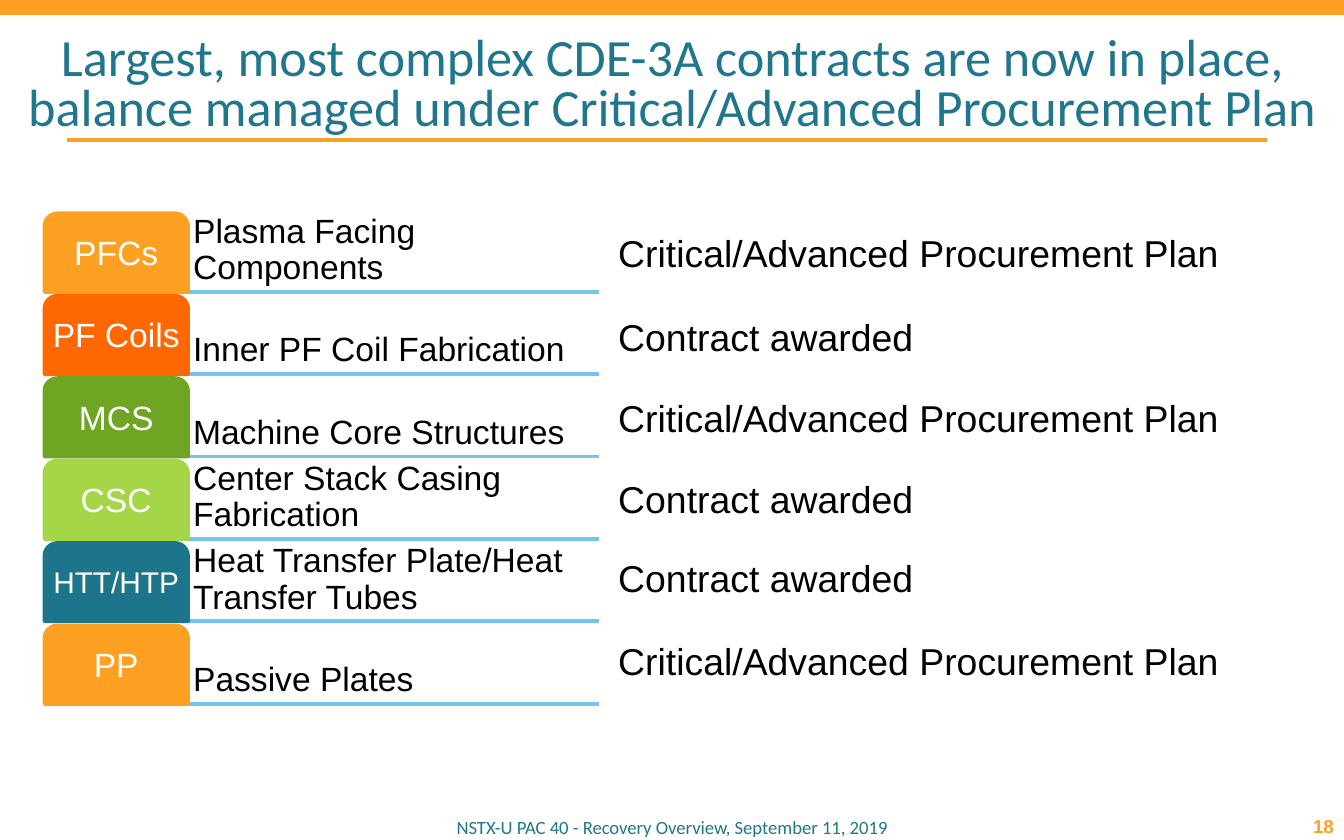
from lxml import etree
from pptx import Presentation
from pptx.dml.color import RGBColor
from pptx.enum import shapes, text
from pptx.oxml.ns import qn
from pptx.util import Pt

TITLE = ("Largest, most complex CDE-3A contracts are now in place, "
         "balance managed under Critical/Advanced Procurement Plan")
FOOTER = "NSTX-U PAC 40 - Recovery Overview, September 11, 2019"
PAGE = "18"
PLAN, AWARDED = "Critical/Advanced Procurement Plan", "Contract awarded"
PROCUREMENTS = [
    ("PFCs", 18, "FEA022", "Plasma Facing Components", PLAN, 119.5),
    ("PF Coils", 18, "FF6700", "Inner PF Coil Fabrication", AWARDED, 165),
    ("MCS", 18, "6EA522", "Machine Core Structures", PLAN, 208),
    ("CSC", 18, "A4D647", "Center Stack Casing Fabrication", AWARDED, 251.3),
    ("HTT/HTP", 16, "1D758C", "Heat Transfer Plate/Heat Transfer Tubes", AWARDED, 293.8),
    ("PP", 18, "FEA022", "Passive Plates", PLAN, 338.4),
]
ORANGE, TEAL, SKY = "FEA022", "20768C", "74C5EE"
LEFT, TOP, PITCH = 23.8, 114.3, 44.15
TAB_W, ROW_H, ROW_W = 77, 42, 297.3
ALIGN, ANCHOR = text.PP_ALIGN, text.MSO_ANCHOR


def rgb(value):
    """Turn a hex string into a colour."""
    return RGBColor.from_string(value)


def write(sp, words, size, color, font="Arial", align=ALIGN.LEFT,
          anchor=ANCHOR.MIDDLE, inset=(7.2, 3.6), spacing=1.0, bold=False):
    """Fill a shape with one formatted paragraph."""
    tf = sp.text_frame
    tf.text = words
    tf.word_wrap = True
    tf.auto_size = text.MSO_AUTO_SIZE.NONE
    tf.vertical_anchor = anchor
    tf.margin_left = tf.margin_right = Pt(inset[0])
    tf.margin_top = tf.margin_bottom = Pt(inset[1])
    p = tf.paragraphs[0]
    p.alignment, p.line_spacing = align, spacing
    p.font.name, p.font.size, p.font.bold = font, Pt(size), bold
    p.font.color.rgb = rgb(color)


def add_text(slide, box, *args, **kwargs):
    """Add a text box holding one paragraph."""
    write(slide.shapes.add_textbox(*map(Pt, box)), *args, **kwargs)


def add_block(slide, kind, box, color):
    """Add a solid shape without shadow or outline."""
    sp = slide.shapes.add_shape(kind, *map(Pt, box))
    sp.shadow.inherit = False
    sp.fill.solid()
    sp.fill.fore_color.rgb = rgb(color)
    sp.line.fill.background()
    return sp


def add_rule(slide, x1, x2, y, color):
    """Add a horizontal line."""
    line = slide.shapes.add_connector(
        shapes.MSO_CONNECTOR.STRAIGHT, Pt(x1), Pt(y), Pt(x2), Pt(y))
    line.line.color.rgb = rgb(color)
    line.line.width = Pt(2)
    etree.SubElement(line._element.spPr, qn("a:effectLst"))


def add_row(slide, y, tab, size, color, name, status, status_top):
    """Add one procurement: tab, name and status."""
    add_rule(slide, LEFT, LEFT + ROW_W, y + ROW_H, SKY)
    add_text(slide, (LEFT + TAB_W, y, ROW_W - TAB_W, ROW_H), name, 18, "000000",
             anchor=ANCHOR.BOTTOM, inset=(2.7, 2.7), spacing=0.9)
    sp = add_block(slide, shapes.MSO_SHAPE.ROUND_2_SAME_RECTANGLE,
                   (LEFT, y, TAB_W, ROW_H), color)
    sp.line.color.rgb = rgb(color)
    sp.line.width = Pt(2)
    write(sp, tab, size, "FFFFFF", align=ALIGN.CENTER, inset=(2.4, 2.4), spacing=0.9)
    add_text(slide, (LEFT + ROW_W + 3, status_top, 362, 31.5), status, 20, "000000",
             anchor=ANCHOR.TOP)


def main():
    """Build and save the slide."""
    prs = Presentation()
    prs.slide_width, prs.slide_height = Pt(720), Pt(450)
    slide = prs.slides.add_slide(prs.slide_layouts[5])
    add_block(slide, shapes.MSO_SHAPE.RECTANGLE, (0, 0, 720, 8), ORANGE)
    title = slide.shapes.title
    title.left, title.top, title.width, title.height = map(Pt, (0, 18, 720, 57))
    write(title, TITLE, 28, TEAL, "Calibri", ALIGN.CENTER, spacing=0.8)
    add_rule(slide, 36, 679, 75, ORANGE)
    for i, row in enumerate(PROCUREMENTS):
        add_row(slide, TOP + i * PITCH, *row)
    add_text(slide, (72, 435.6, 576, 15), FOOTER, 10, TEAL, "Calibri", ALIGN.CENTER)
    add_text(slide, (671.5, 435, 43, 15), PAGE, 10, ORANGE, align=ALIGN.RIGHT,
             inset=(0, 0), bold=True)
    prs.save("out.pptx")


if __name__ == "__main__":
    main()
